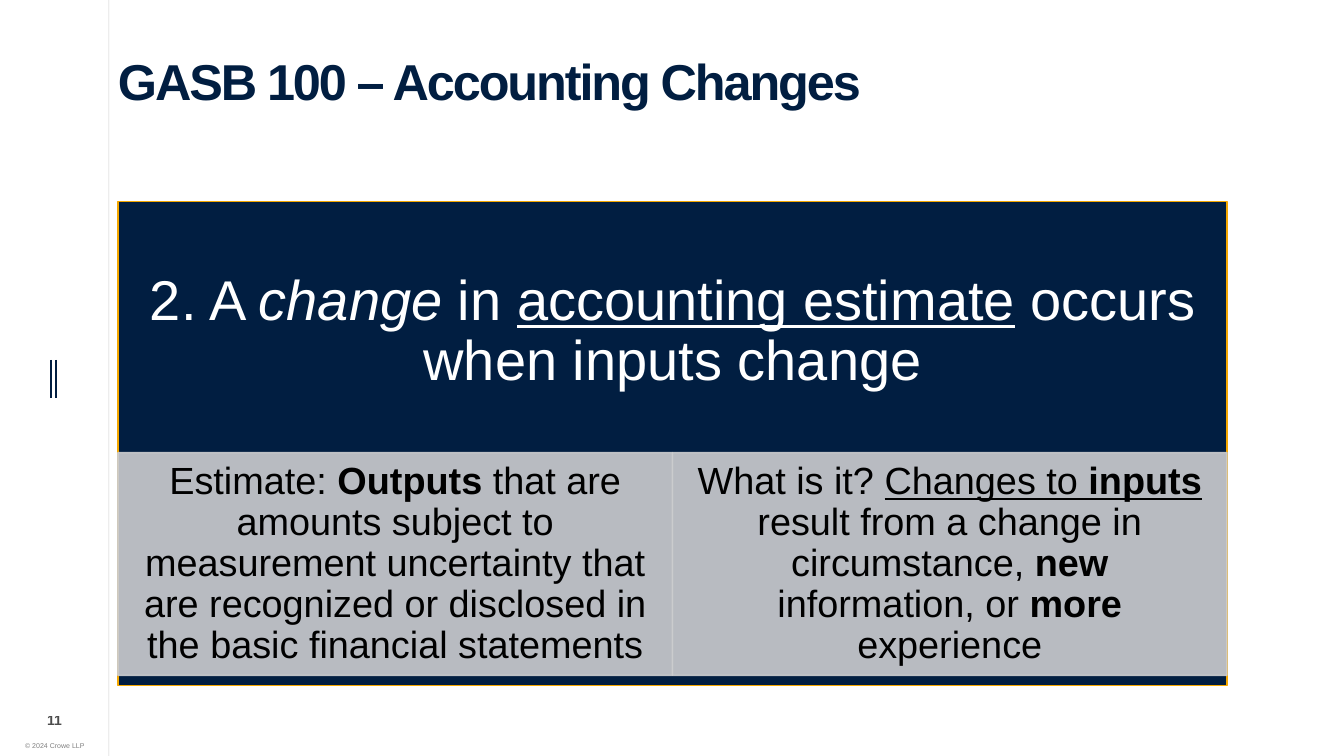
import pptx
import pptx.util
import pptx.dml.color
import pptx.enum.shapes
import pptx.enum.text
import pptx.oxml.ns
import pptx.oxml.xmlchemy
from pptx.util import Inches

ALIGN = pptx.enum.text.PP_ALIGN
ANCHOR = pptx.enum.text.MSO_ANCHOR


def rgb(value):
    return pptx.dml.color.RGBColor.from_string(value)


def set_alpha(element, percent):
    """Make every colour inside the element partly opaque."""
    for clr in element.iter(pptx.oxml.ns.qn("a:srgbClr")):
        alpha = pptx.oxml.xmlchemy.OxmlElement("a:alpha")
        alpha.set("val", str(percent * 1000))
        clr.append(alpha)


def add_run(p, text, size=27, color="000000", bold=False, italic=False,
            underline=False, tracking=None, alpha=None):
    r = p.add_run()
    r.text = text
    font = r.font
    font.name = "Arial"
    font.size = pptx.util.Pt(size)
    font.bold, font.italic, font.underline = bold, italic, underline
    font.color.rgb = rgb(color)
    if tracking is not None:
        r._r.get_or_add_rPr().set("spc", str(int(tracking * 100)))
    if alpha is not None:
        set_alpha(r._r, alpha)


class SlideBuilder:
    NAVY, GOLD, GRAY = "011E41", "F5A800", "CCCDCF"

    def __init__(self, prs):
        self.s = prs.slides.add_slide(prs.slide_layouts[5])

    def fill_text(self, sp, runs, insets=(0, 0, 0, 0), align=ALIGN.CENTER,
                  anchor=ANCHOR.MIDDLE, spacing=0.9, wrap=True, **style):
        tf = sp.text_frame
        tf.auto_size = pptx.enum.text.MSO_AUTO_SIZE.NONE
        tf.word_wrap = wrap
        tf.vertical_anchor = anchor
        tf.margin_left, tf.margin_top, tf.margin_right, tf.margin_bottom = map(Inches, insets)
        p = tf.paragraphs[0]
        p.alignment = align
        p.line_spacing = spacing
        for text, changes in runs:
            add_run(p, text, **{**style, **changes})

    def title(self, text, x, y, w, h):
        sp = self.s.shapes.title
        sp.left, sp.top, sp.width, sp.height = map(Inches, (x, y, w, h))
        self.fill_text(sp, [(text, {})], insets=(0, 0.21, 0, 0), align=ALIGN.LEFT,
                       anchor=ANCHOR.TOP, spacing=0.8, size=36, color=self.NAVY,
                       bold=True, tracking=-1.5)

    def text(self, runs, x, y, w, h, **fmt):
        sp = self.s.shapes.add_textbox(*map(Inches, (x, y, w, h)))
        self.fill_text(sp, runs, **fmt)

    def rect(self, x, y, w, h, fill, line, alpha=None):
        sp = self.s.shapes.add_shape(pptx.enum.shapes.MSO_SHAPE.RECTANGLE,
                                     *map(Inches, (x, y, w, h)))
        sp.shadow.inherit = False
        sp.fill.solid()
        sp.fill.fore_color.rgb = rgb(fill)
        sp.line.color.rgb = rgb(line)
        sp.line.width = pptx.util.Pt(1)
        if alpha is not None:
            set_alpha(sp.element, alpha)
        return sp

    def vline(self, x, top, bottom, color, width, alpha=None):
        cn = self.s.shapes.add_connector(pptx.enum.shapes.MSO_CONNECTOR.STRAIGHT,
                                         *map(Inches, (x, top, x, bottom)))
        cn.line.color.rgb = rgb(color)
        cn.line.width = pptx.util.Pt(width)
        cn._element.spPr.append(pptx.oxml.xmlchemy.OxmlElement("a:effectLst"))
        if alpha is not None:
            set_alpha(cn._element, alpha)


def main():
    prs = pptx.Presentation()
    prs.slide_width, prs.slide_height = Inches(13.33), Inches(7.5)
    b = SlideBuilder(prs)
    left, width = 1.17, 11

    # Side margin
    for x in (0.51, 0.56):
        b.vline(x, 3.57, 3.95, b.NAVY, 1.5)
    b.vline(1.08, 0, 7.5, "000000", 0.5, alpha=20)
    b.text([("© 2024 Crowe LLP", {})], 0.14, 7.31, 0.81, 0.19, insets=(0.1, 0.05, 0.1, 0.05),
           anchor=ANCHOR.TOP, spacing=1.0, wrap=False, size=5, color="808080")
    b.text([("11", {})], 0.26, 7.02, 0.56, 0.25, spacing=1.0, size=10, bold=True, alpha=70)

    # Title
    b.title("GASB 100 – Accounting Changes", left, 0.4, width, 1.5)

    # Navy block with its headline
    b.rect(left, 2, width, 4.8, b.NAVY, b.GOLD)
    headline = [("2. A ", {}), ("change", {"italic": True}), (" in ", {}),
                ("accounting estimate", {"underline": True}),
                (" occurs when inputs change", {})]
    b.text(headline, left, 2, width, 2.59, insets=(0.31,) * 4, size=40, color="FFFFFF")

    # Two gray panels
    bold = {"bold": True}
    panels = [
        [("Estimate: ", {}), ("Outputs", bold),
         (" that are amounts subject to measurement uncertainty that are recognized "
          "or disclosed in the basic financial statements", {})],
        [("What is it? ", {}), ("Changes to ", {"underline": True}),
         ("inputs", {"bold": True, "underline": True}),
         (" result from a change in circumstance, ", {}), ("new", bold),
         (" information, or ", {}), ("more", bold), (" experience", {})],
    ]
    panel_w = width / len(panels)
    for i, runs in enumerate(panels):
        sp = b.rect(left + i * panel_w, 4.49, panel_w, 2.21, b.GRAY, b.GRAY, alpha=90)
        b.fill_text(sp, runs, insets=(0.21, 0.04, 0.21, 0.04))

    prs.save("out.pptx")


if __name__ == "__main__":
    main()
